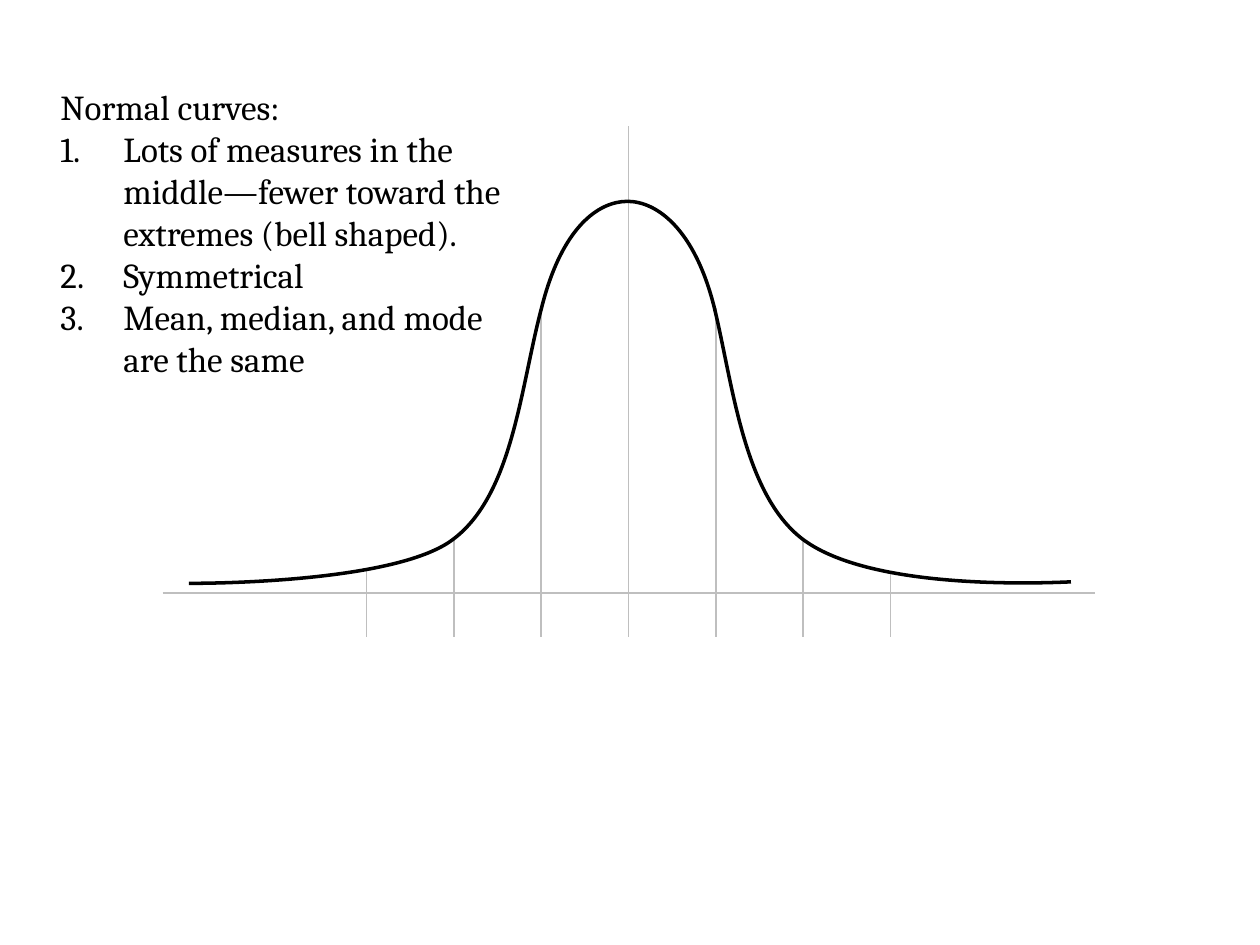
"""Build a slide that shows a normal curve and its three properties."""
from dataclasses import dataclass

from lxml import etree
from pptx import Presentation
from pptx import util as u
from pptx.dml.color import RGBColor
from pptx.enum import shapes, text
from pptx.oxml import ns

COLOURS = {"ink": "000000", "guide": "BFBFBF"}
MEAN_X, DEVIATION, GUIDE_BOTTOM = 12.67, 1.76, 12.85
GUIDE_TOPS = [2.54, 6.2, 10.87, 11.51]
BELL = [
    (21.59, 11.73),
    (20.27, 11.79), (17.4, 11.79), (16.18, 10.87),
    (14.99, 9.96), (14.78, 7.77), (14.4, 6.2),
    (14, 4.6), (13.23, 4.06), (12.65, 4.06),
    (12.07, 4.06), (11.33, 4.57), (10.92, 6.2),
    (10.49, 7.82), (10.34, 9.96), (9.14, 10.87),
    (7.95, 11.79), (3.81, 11.76), (3.81, 11.76),
]
PROPERTIES = [
    "Lots of measures in the middle—fewer toward the extremes (bell shaped).",
    "Symmetrical",
    "Mean, median, and mode \vare the same",
]


@dataclass(frozen=True)
class Guide:
    x1: float
    y1: float
    x2: float
    y2: float


def colour(name: str) -> RGBColor:
    return RGBColor.from_string(COLOURS[name])


def draw_guide(page, guide: Guide) -> None:
    ends = [u.Cm(v) for v in (guide.x1, guide.y1, guide.x2, guide.y2)]
    line = page.shapes.add_connector(shapes.MSO_CONNECTOR.STRAIGHT, *ends)
    line.line.color.rgb = colour("guide")
    line.line.width = u.Pt(1)
    etree.SubElement(line._element.spPr, ns.qn("a:effectLst"))


def draw_bell(page, points: list[tuple[float, float]]) -> None:
    start, *rest = [(u.Cm(x), u.Cm(y)) for x, y in points]
    builder = page.shapes.build_freeform(*start)
    builder.add_line_segments(rest, close=False)
    bell = builder.convert_to_shape()
    bell.shadow.inherit = False
    bell.fill.background()
    bell.line.color.rgb = colour("ink")
    bell.line.width = u.Pt(2)
    outline = bell._element.find(".//" + ns.qn("a:path"))
    segments = outline.findall(ns.qn("a:lnTo"))
    for first in range(0, len(segments), 3):
        curve = etree.SubElement(outline, ns.qn("a:cubicBezTo"))
        for segment in segments[first:first + 3]:
            curve.append(segment[0])
            outline.remove(segment)


def write(para, words: str, *, size: float = 20, font: str = "Cambria",
          ink: str = "ink", numbered: bool = False) -> None:
    para.text = words
    para.alignment = text.PP_ALIGN.LEFT
    for span in para.runs:
        span.font.size = u.Pt(size)
        span.font.name = font
        span.font.color.rgb = colour(ink)
    if numbered:
        props = para._p.get_or_add_pPr()
        props.set("marL", str(u.Cm(1.27)))
        props.set("indent", str(-u.Cm(1.27)))
        etree.SubElement(props, ns.qn("a:buFont"), typeface="+mj-lt")
        etree.SubElement(props, ns.qn("a:buAutoNum"), type="arabicPeriod")


def draw_properties(page) -> None:
    box = page.shapes.add_textbox(u.Cm(0.97), u.Cm(1.6), u.Cm(10.19), u.Cm(6.25))
    frame = box.text_frame
    frame.word_wrap = True
    frame.auto_size = text.MSO_AUTO_SIZE.SHAPE_TO_FIT_TEXT
    write(frame.paragraphs[0], "Normal curves:")
    for words in PROPERTIES:
        write(frame.add_paragraph(), words, numbered=True)


def main() -> None:
    deck = Presentation()
    deck.slide_width, deck.slide_height = u.Cm(25.4), u.Cm(19.05)
    page = deck.slides.add_slide(deck.slide_layouts[6])
    for step in range(-3, 4):
        x = MEAN_X + step * DEVIATION
        draw_guide(page, Guide(x, GUIDE_TOPS[abs(step)], x, GUIDE_BOTTOM))
    draw_guide(page, Guide(3.28, 11.96, 22.07, 11.96))
    draw_bell(page, BELL)
    draw_properties(page)
    deck.save("out.pptx")


if __name__ == "__main__":
    main()
